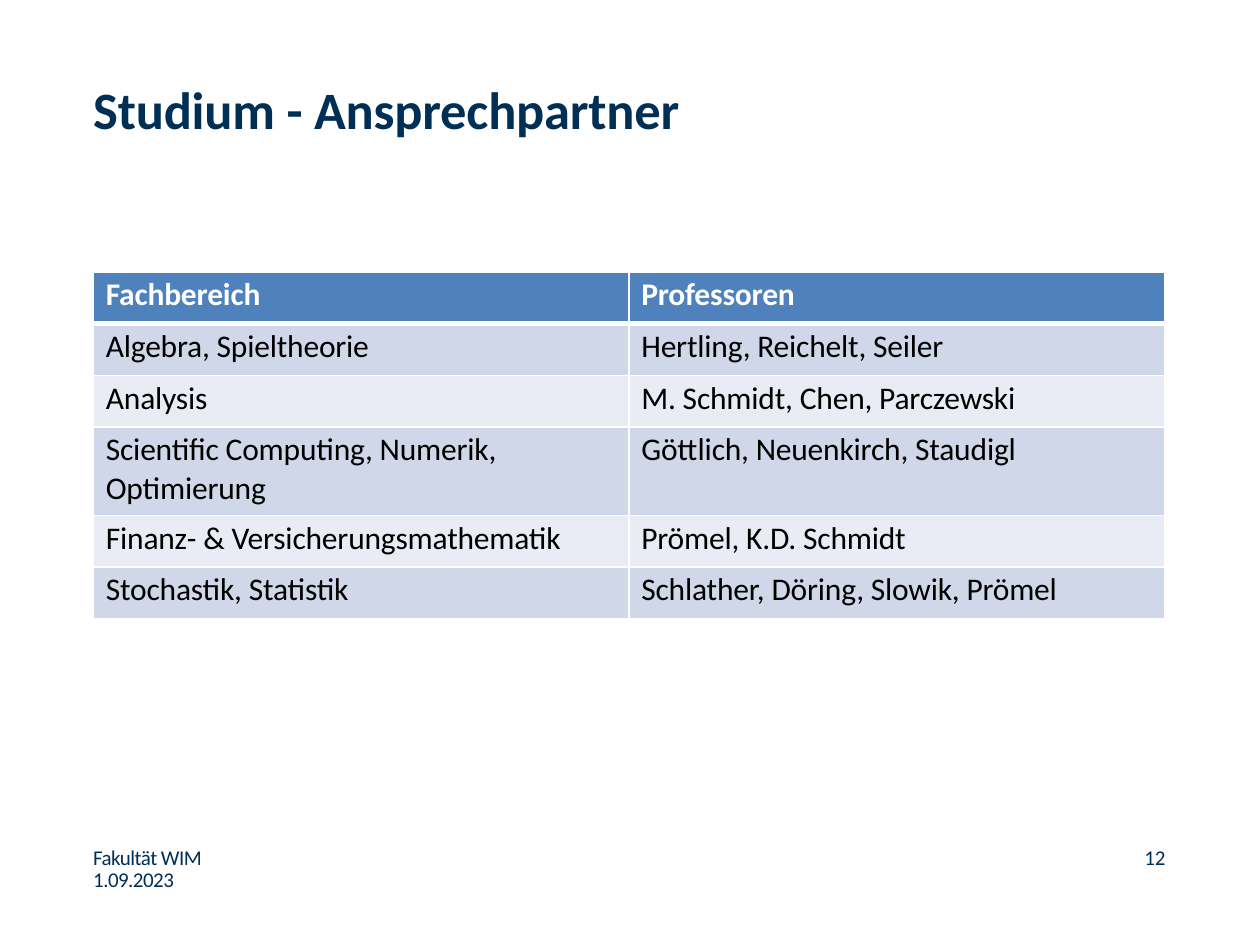
from lxml.etree import SubElement
from pptx import Presentation
from pptx.dml.color import RGBColor
from pptx.enum.text import PP_ALIGN
from pptx.oxml.ns import qn
from pptx.util import Inches, Pt

NAVY = RGBColor(0x00, 0x2F, 0x55)
BLUE = RGBColor(0x4F, 0x81, 0xBC)
BAND_DARK = RGBColor(0xD0, 0xD7, 0xE8)
BAND_LIGHT = RGBColor(0xE9, 0xEC, 0xF4)
WHITE = RGBColor(0xFF, 0xFF, 0xFF)
BLACK = RGBColor(0x00, 0x00, 0x00)

CONTACTS = [
    ("Fachbereich", "Professoren"),
    ("Algebra, Spieltheorie", "Hertling, Reichelt, Seiler"),
    ("Analysis", "M. Schmidt, Chen, Parczewski"),
    ("Scientific Computing, Numerik, Optimierung",
     "Göttlich, Neuenkirch, Staudigl"),
    ("Finanz- & Versicherungsmathematik", "Prömel, K.D. Schmidt"),
    ("Stochastik, Statistik", "Schlather, Döring, Slowik, Prömel"),
]
ROW_HEIGHTS = [0.41, 0.41, 0.41, 0.7, 0.41, 0.41]


def format_text(tf, size, color, bold=False, spacing=0):
    for p in tf.paragraphs:
        for r in p.runs:
            r.font.name = "Calibri"
            r.font.size = Pt(size)
            r.font.bold = bold
            r.font.color.rgb = color
            if spacing:
                r.font._element.set("spc", str(round(spacing * 100)))


def add_text(s, text, left, top, width, height, size, bold=False, spacing=0,
             line_spacing=None, align=PP_ALIGN.LEFT):
    sp = s.shapes.add_textbox(
        Inches(left), Inches(top), Inches(width), Inches(height))
    tf = sp.text_frame
    tf.word_wrap = True
    tf.margin_left = tf.margin_top = tf.margin_right = tf.margin_bottom = 0
    tf.text = text
    p = tf.paragraphs[0]
    p.alignment = align
    if line_spacing:
        p.line_spacing = Pt(line_spacing)
    format_text(tf, size, NAVY, bold, spacing)


def set_border(cell, side, width):
    ln = SubElement(cell._tc.get_or_add_tcPr(), qn(f"a:{side}"),
                    w=str(Pt(width)))
    fill = SubElement(ln, qn("a:solidFill"))
    SubElement(fill, qn("a:srgbClr"), val=str(WHITE))


def style_cell(cell, text, row):
    header = row == 0
    cell.margin_left = Inches(0.1)
    cell.margin_top = Inches(0.03)
    cell.margin_right = cell.margin_bottom = 0
    cell.text = text
    format_text(cell.text_frame, 18, WHITE if header else BLACK, header, -0.1)
    widths = {"lnL": 1, "lnR": 1, "lnT": 3 if row == 1 else 1,
              "lnB": 3 if header else 1}
    for side, width in widths.items():
        set_border(cell, side, width)
    cell.fill.solid()
    band = BAND_DARK if row % 2 else BAND_LIGHT
    cell.fill.fore_color.rgb = BLUE if header else band


def add_contact_table(s):
    table = s.shapes.add_table(
        len(CONTACTS), 2, Inches(0.74), Inches(2.16),
        Inches(8.5), Inches(sum(ROW_HEIGHTS))).table
    for row, (texts, height) in enumerate(zip(CONTACTS, ROW_HEIGHTS)):
        table.rows[row].height = Inches(height)
        for col, text in enumerate(texts):
            style_cell(table.cell(row, col), text, row)


def main():
    prs = Presentation()
    prs.slide_width = Inches(10)
    prs.slide_height = Inches(7.5)
    s = prs.slides.add_slide(prs.slide_layouts[6])
    add_text(s, "Studium - Ansprechpartner", 0.74, 0.61, 5.2, 0.53, 30,
             bold=True, spacing=-0.1)
    add_text(s, "Fakultät WIM 1.09.2023", 0.74, 6.73, 0.94, 0.34, 12,
             spacing=-0.3, line_spacing=12.4)
    add_text(s, "12", 9, 6.73, 0.25, 0.19, 12, line_spacing=12.4,
             align=PP_ALIGN.RIGHT)
    add_contact_table(s)
    prs.save("out.pptx")


if __name__ == "__main__":
    main()
